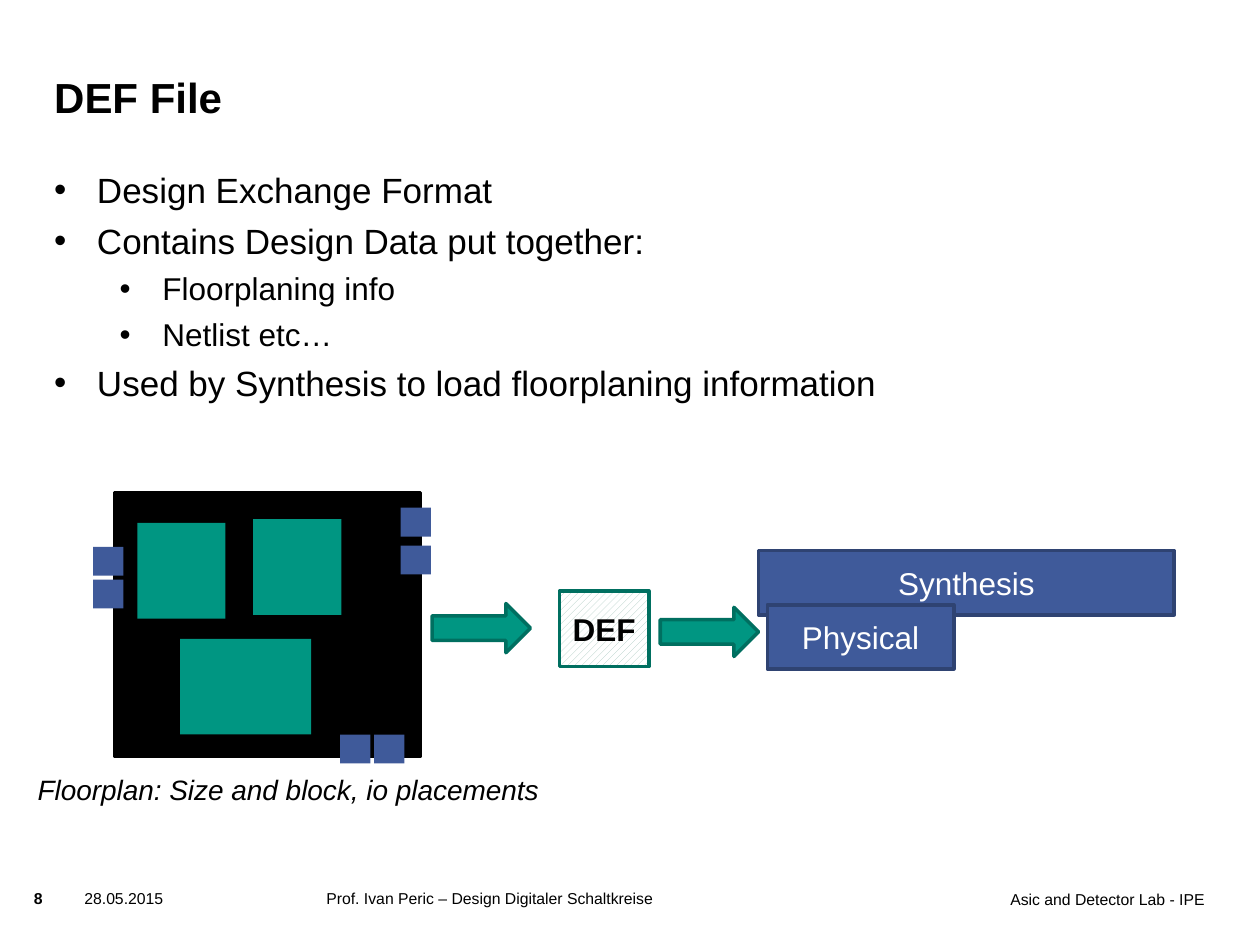
from dataclasses import dataclass

from lxml.etree import SubElement
from pptx import Presentation
from pptx.dml.color import RGBColor
from pptx.enum.dml import MSO_PATTERN
from pptx.enum.shapes import MSO_SHAPE
from pptx.enum.text import MSO_ANCHOR, PP_ALIGN
from pptx.oxml.ns import qn
from pptx.util import Pt

PX = 9144  # EMU per px, 100 px to the inch
COLORS = {
    "black": "000000", "white": "FFFFFF",
    "green": "009682", "green_edge": "006F60", "hatch": "AAC9C1",
    "blue": "3F5A9A", "blue_edge": "2F4372",
}
PAD_W, PAD_H = 24, 23
INDENT = 34


@dataclass
class Box:
    x: int
    y: int
    w: int
    h: int
    fill: str = ""
    edge: str = ""
    label: str = ""
    kind: MSO_SHAPE = MSO_SHAPE.RECTANGLE


@dataclass
class Label:
    text: str
    x: int
    y: int
    w: int
    h: int
    size: int = 9
    bold: bool = False
    italic: bool = False
    align: PP_ALIGN = PP_ALIGN.LEFT
    inset: bool = False


def rgb(name: str) -> RGBColor:
    return RGBColor.from_string(COLORS[name])


def emu(*lengths: int) -> list[int]:
    return [length * PX for length in lengths]


def style(font, size: int, color: str = "black", **extra) -> None:
    values = {"name": "Arial", "size": Pt(size), "bold": False, **extra}
    for key, value in values.items():
        setattr(font, key, value)
    font.color.rgb = rgb(color)


def set_frame(tf, inset: bool = False, anchor: MSO_ANCHOR = MSO_ANCHOR.TOP) -> None:
    values = {"word_wrap": True, "vertical_anchor": anchor}
    if not inset:
        sides = ("left", "top", "right", "bottom")
        values.update({f"margin_{side}": 0 for side in sides})
    for key, value in values.items():
        setattr(tf, key, value)


def add_label(s, label: Label) -> None:
    sp = s.shapes.add_textbox(*emu(label.x, label.y, label.w, label.h))
    set_frame(sp.text_frame, label.inset)
    p = sp.text_frame.paragraphs[0]
    p.text, p.alignment = label.text, label.align
    style(p.runs[0].font, label.size, bold=label.bold, italic=label.italic)


def add_box(s, box: Box) -> None:
    sp = s.shapes.add_shape(box.kind, *emu(box.x, box.y, box.w, box.h))
    sp.shadow.inherit = False
    if box.fill == "hatch":
        sp.fill.patterned()
        sp.fill.pattern = MSO_PATTERN.WIDE_UPWARD_DIAGONAL
        sp.fill.fore_color.rgb = rgb("hatch")
        sp.fill.back_color.rgb = rgb("white")
    else:
        sp.fill.solid()
        sp.fill.fore_color.rgb = rgb(box.fill)
    if box.edge:
        sp.line.color.rgb = rgb(box.edge)
        sp.line.width = Pt(2)
    else:
        sp.line.fill.background()
    if box.label:
        set_frame(sp.text_frame, True, MSO_ANCHOR.MIDDLE)
        p = sp.text_frame.paragraphs[0]
        p.text, p.alignment = box.label, PP_ALIGN.CENTER
        hatched = box.fill == "hatch"
        style(p.runs[0].font, 18, "black" if hatched else "white", bold=hatched)


def add_bullets(s, items: list[tuple[int, str]], area: tuple) -> None:
    tf = s.shapes.add_textbox(*emu(*area)).text_frame
    set_frame(tf)
    for i, (level, text) in enumerate(items):
        p = tf.paragraphs[0] if i == 0 else tf.add_paragraph()
        p.text, p.level = text, level
        p.space_before = Pt(4.7 if i else 0)
        pPr = p._p.get_or_add_pPr()
        pPr.set("marL", str((INDENT + 52 * level) * PX))
        pPr.set("indent", str(-INDENT * PX))
        SubElement(pPr, qn("a:buFont")).set("typeface", "Arial")
        SubElement(pPr, qn("a:buChar")).set("char", "•")
        style(p.runs[0].font, 20 - 2 * level)


def main() -> None:
    prs = Presentation()
    prs.slide_width, prs.slide_height = emu(1000, 750)
    s = prs.slides.add_slide(prs.slide_layouts[5])

    # Title
    title = s.shapes.title
    title.left, title.top, title.width, title.height = emu(43, 36, 756, 61)
    set_frame(title.text_frame, anchor=MSO_ANCHOR.BOTTOM)
    p = title.text_frame.paragraphs[0]
    p.text, p.alignment = "DEF File", PP_ALIGN.LEFT
    style(p.runs[0].font, 24, bold=True)

    # Bullets
    add_bullets(s, [
        (0, "Design Exchange Format"),
        (0, "Contains Design Data put together:"),
        (1, "Floorplaning info"),
        (1, "Netlist etc…"),
        (0, "Used by Synthesis to load floorplaning information"),
    ], (43, 134, 914, 532))

    # Floorplan: die, blocks and io pads
    die = Box(91, 391, 243, 209, "black", "black")
    blocks = [Box(x, y, w, 76, "green")
              for x, y, w in [(109, 415, 70), (201, 412, 70), (143, 507, 104)]]
    pads = [Box(x, y, PAD_W, PAD_H, "blue")
            for x, y in [(318, 403), (318, 433), (270, 583),
                         (297, 583), (74, 434), (74, 460)]]

    # Flow: floorplan to DEF to synthesis
    arrows = [Box(x, y, 78, 39, "green", "green_edge", kind=MSO_SHAPE.RIGHT_ARROW)
              for x, y in [(343, 479), (524, 482)]]
    stages = [
        Box(444, 469, 71, 60, "hatch", "green_edge", "DEF"),
        Box(602, 437, 330, 51, "blue", "blue_edge", "Synthesis"),
        Box(609, 480, 148, 51, "blue", "blue_edge", "Physical"),
    ]
    for box in [die, *blocks, *stages, *arrows, *pads]:
        add_box(s, box)

    # Caption and footer
    for label in [
        Label("Floorplan: Size and block, io placements", 20, 608, 425, 37,
              size=16, italic=True, inset=True),
        Label("8", 27, 705, 36, 24, bold=True),
        Label("28.05.2015", 67, 705, 94, 39),
        Label("Prof. Ivan Peric – Design Digitaler Schaltkreise", 259, 705, 299, 39),
        Label("Asic and Detector Lab - IPE", 657, 706, 299, 39, align=PP_ALIGN.RIGHT),
    ]:
        add_label(s, label)

    prs.save("out.pptx")


if __name__ == "__main__":
    main()
